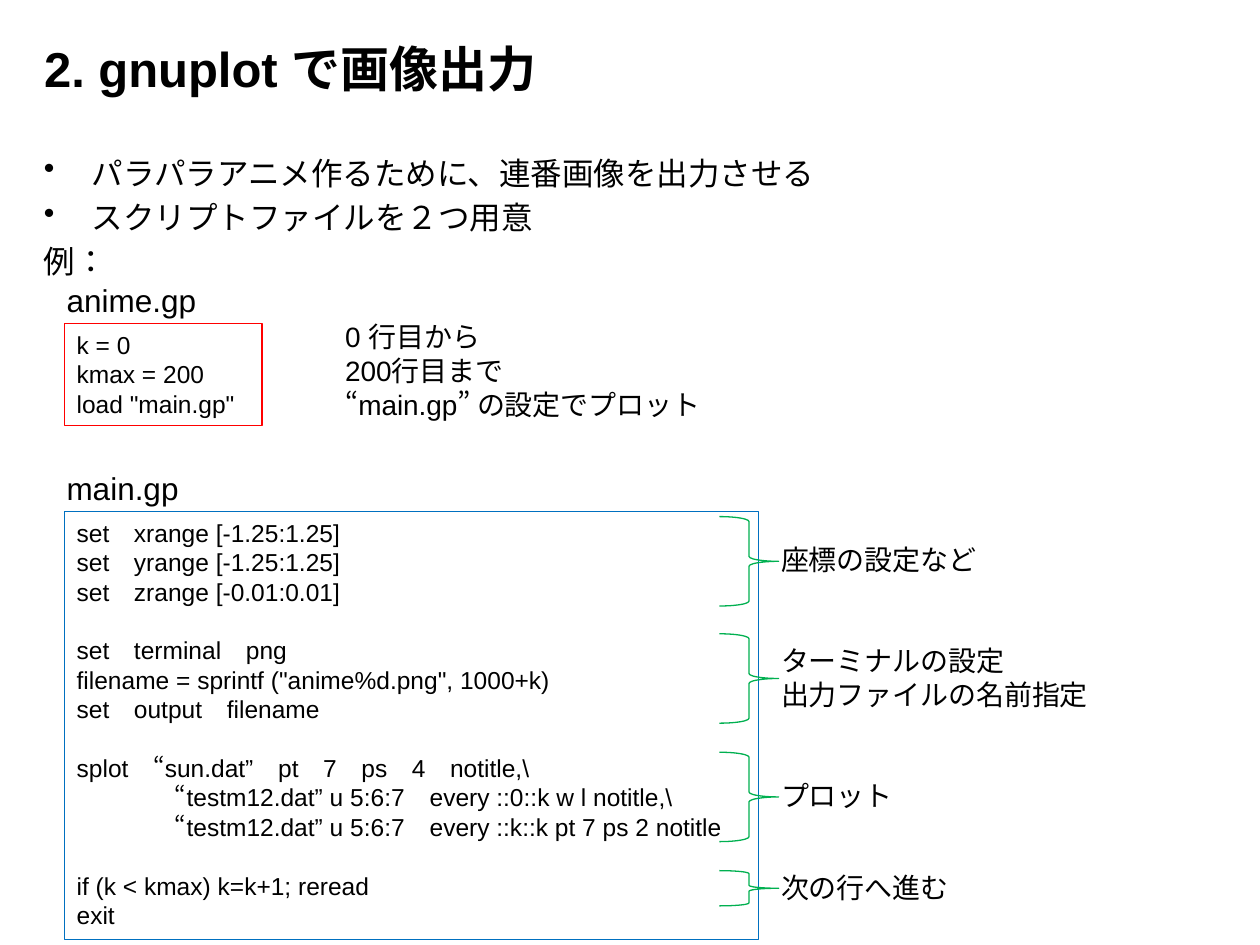
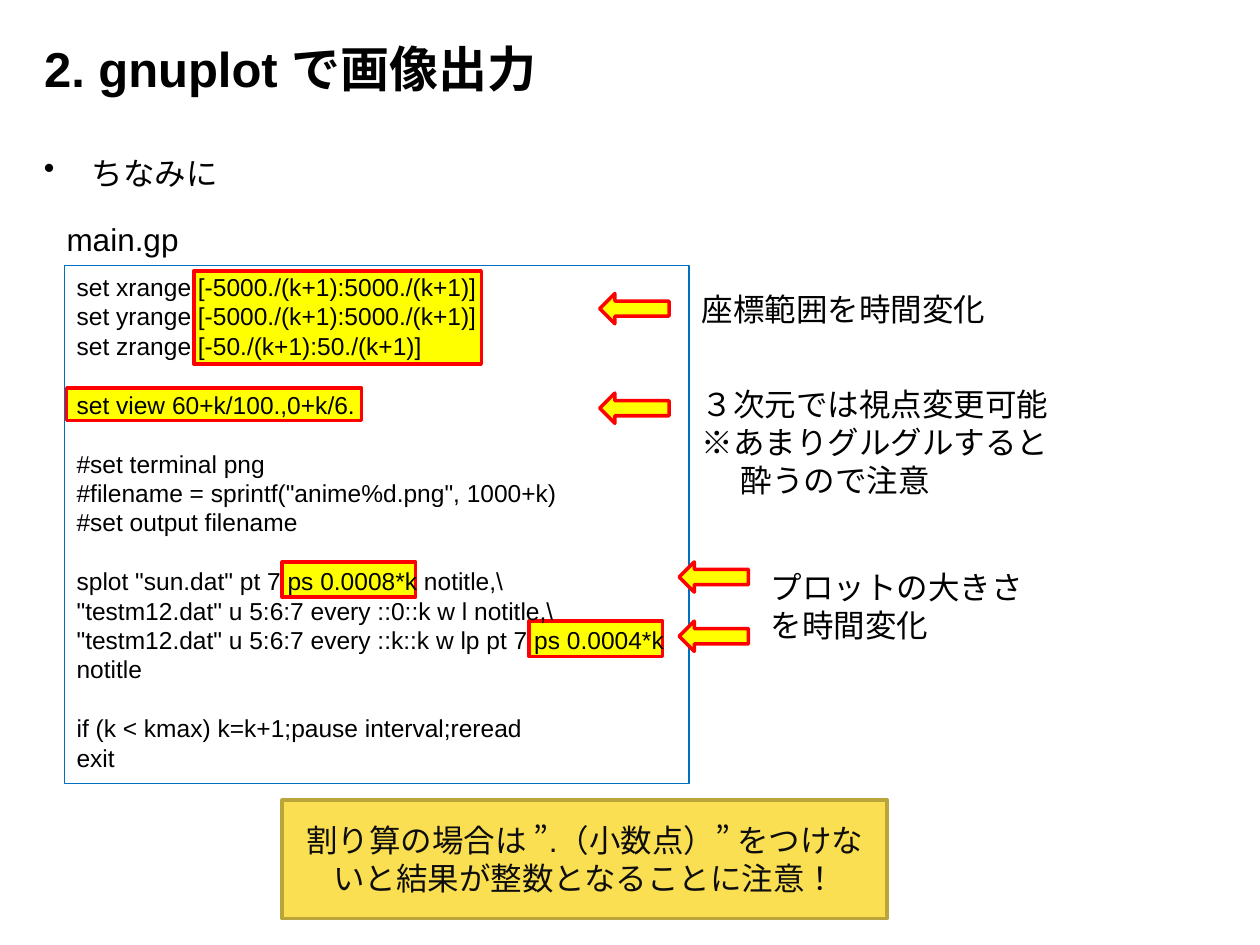
from lxml import etree
from pptx import Presentation
from pptx import util as u
from pptx.dml import color
from pptx.enum import lang, shapes, text
from pptx.oxml import ns

KIND = shapes.MSO_SHAPE
LEFT, MID = text.PP_ALIGN.LEFT, text.PP_ALIGN.CENTER
TOP, HALF = text.MSO_ANCHOR.TOP, text.MSO_ANCHOR.MIDDLE
INK, RED, BLUE, GREEN, YELLOW = "000000", "FF0000", "0070C0", "00B050", "FFFF00"
HEAD = "2. gnuplot で画像出力"
LEAD = 1.2


def write(box, lines, size, ink=INK, align=LEFT, anchor=TOP, bold=False):
    frame = box.text_frame
    for key, val in {"word_wrap": True, "vertical_anchor": anchor}.items():
        setattr(frame, key, val)
    para, gap = frame.paragraphs[0], 0
    for num, line in enumerate(lines):
        if isinstance(line, (int, float)):
            gap = line
            continue
        if num:
            para = frame.add_paragraph()
        form = {"alignment": align, "line_spacing": u.Pt(size * LEAD),
                "space_before": u.Pt(gap)}
        for key, val in form.items():
            setattr(para, key, val)
        gap = 0
        run = para.add_run()
        run.text = line
        form = {"name": "Arial", "size": u.Pt(size), "bold": bold,
                "language_id": lang.MSO_LANGUAGE_ID.JAPANESE}
        for key, val in form.items():
            setattr(run.font, key, val)
        run.font.color.rgb = color.RGBColor.from_string(ink)
    return frame.paragraphs


def draw(slide, kind, at, line=None, wide=0.75, fill=None):
    at = [u.Inches(n) for n in at]
    if kind is None:
        return slide.shapes.add_textbox(*at)
    shape = slide.shapes.add_shape(kind, *at)
    shape.shadow.inherit = False
    shape.line.color.rgb = color.RGBColor.from_string(line)
    shape.line.width = u.Pt(wide)
    if fill:
        shape.fill.solid()
        shape.fill.fore_color.rgb = color.RGBColor.from_string(fill)
    else:
        shape.fill.background()
    return shape


deck = Presentation()
deck.slide_width, deck.slide_height = u.Inches(10), u.Inches(7.5)

marks = [(4.2, 4.93, 1.06, 0.28), (2.24, 4.46, 1.06, 0.28),
         (1.54, 2.15, 2.28, 0.74), (0.53, 3.08, 2.34, 0.26)]
points = [["パラパラアニメ作るために、連番画像を出力させる", 3.6,
           "スクリプトファイルを２つ用意", 3.6, "例："],
          ["ちなみに"]]
pages = []
for spots, items in zip([[], marks], points):
    slide = deck.slides.add_slide(deck.slide_layouts[5])
    pages.append(slide)
    for at in spots:
        draw(slide, KIND.RECTANGLE, at, RED, 2, YELLOW)
    title = slide.shapes.title
    form = {"left": 0.25, "top": 0.29, "width": 8.17, "height": 0.5}
    for key, val in form.items():
        setattr(title, key, u.Inches(val))
    write(title, [HEAD], 28, anchor=HALF, bold=True)
    body = draw(slide, None, (0.25, 1.17, 8.25, 5.58))
    for para in write(body, items, 18):
        props = para._p.get_or_add_pPr()
        props.set("marL", str(u.Inches(0.38)))
        props.set("indent", str(u.Inches(-0.38)))
        if para.text != "例：":
            etree.SubElement(props, ns.qn("a:buChar")).set("char", "•")
first, second = pages

skip = 14 * LEAD
main = ["set　xrange [-1.25:1.25]",
        "set　yrange [-1.25:1.25]",
        "set　zrange [-0.01:0.01]",
        skip,
        "set　terminal　png",
        'filename = sprintf ("anime%d.png", 1000+k)',
        "set　output　filename",
        skip,
        "splot　“sun.dat”　pt　7　ps　4　notitle,\\",
        "　　　　“testm12.dat” u 5:6:7　every ::0::k w l notitle,\\",
        "　　　　“testm12.dat” u 5:6:7　every ::k::k pt 7 ps 2 notitle",
        skip,
        "if (k < kmax) k=k+1; reread",
        "exit"]
anime = ["k = 0", "kmax = 200", 'load "main.gp"']
zoom = ["set xrange [-5000./(k+1):5000./(k+1)]",
        "set yrange [-5000./(k+1):5000./(k+1)]",
        "set zrange [-50./(k+1):50./(k+1)]",
        skip,
        "set view 60+k/100.,0+k/6.",
        skip,
        "#set terminal png",
        '#filename = sprintf("anime%d.png", 1000+k)',
        "#set output filename",
        skip,
        'splot "sun.dat" pt 7 ps 0.0008*k notitle,\\',
        '"testm12.dat" u 5:6:7 every ::0::k w l notitle,\\',
        '"testm12.dat" u 5:6:7 every ::k::k w lp pt 7 ps 0.0004*k notitle',
        skip,
        "if (k < kmax) k=k+1;pause interval;reread",
        "exit"]
for slide, at, line, code, inset in [
        (first, (0.51, 4.06, 5.51, 3.4), BLUE, main, 0),
        (first, (0.51, 2.57, 1.57, 0.81), RED, anime, 0.1),
        (second, (0.51, 2.11, 4.96, 4.11), BLUE, zoom, 0.1)]:
    box = draw(slide, KIND.RECTANGLE, at, line)
    box.text_frame.margin_right = u.Inches(inset)
    write(box, code, 14)

for slide, top, name in [(first, 2.18, "anime.gp"), (first, 3.67, "main.gp"),
                         (second, 1.7, "main.gp")]:
    write(draw(slide, None, (0.43, top, 1.65, 0.4)), [name], 18)

wide = 2 * 16 * LEAD
for slide, at, size, lines in [
        (first, (2.64, 2.49, 3.7, 0.94), 16,
         ["0 行目から", "200行目まで", "“main.gp” の設定でプロット"]),
        (first, (6.1, 4.26, 2.68, 3), 16,
         ["座標の設定など", wide, "ターミナルの設定", "出力ファイルの名前指定",
          wide, "プロット", 2 * skip, "次の行へ進む"]),
        (second, (5.47, 2.25, 3.46, 0.4), 18, ["座標範囲を時間変化"]),
        (second, (5.47, 3.01, 3.46, 1.01), 18,
         ["３次元では視点変更可能", "※あまりグルグルすると", "酔うので注意"]),
        (second, (6.02, 4.46, 2.28, 0.71), 18, ["プロットの大きさを時間変化"])]:
    paras = write(draw(slide, None, at), lines, size)
    if paras[-1].text == "酔うので注意":
        paras[-1]._p.get_or_add_pPr().set("marL", str(u.Inches(0.31)))

for top, high in [(4.1, 0.71), (5.03, 0.71), (5.97, 0.71), (6.91, 0.28)]:
    draw(first, KIND.RIGHT_BRACE, (5.71, top, 0.47, high), GREEN)

for left, top in [(4.76, 2.33), (4.76, 3.12), (5.39, 4.46), (5.39, 4.93)]:
    draw(second, KIND.LEFT_ARROW, (left, top, 0.55, 0.24), RED, 2, YELLOW)

note = draw(second, KIND.RECTANGLE, (2.24, 6.35, 4.8, 0.94), "BAA53D", 2, "FBDF53")
write(note, ["割り算の場合は ”.（小数点）” をつけないと結果が整数となることに注意！"],
      18, "0D0D0D", MID, HALF)

deck.save("out.pptx")
